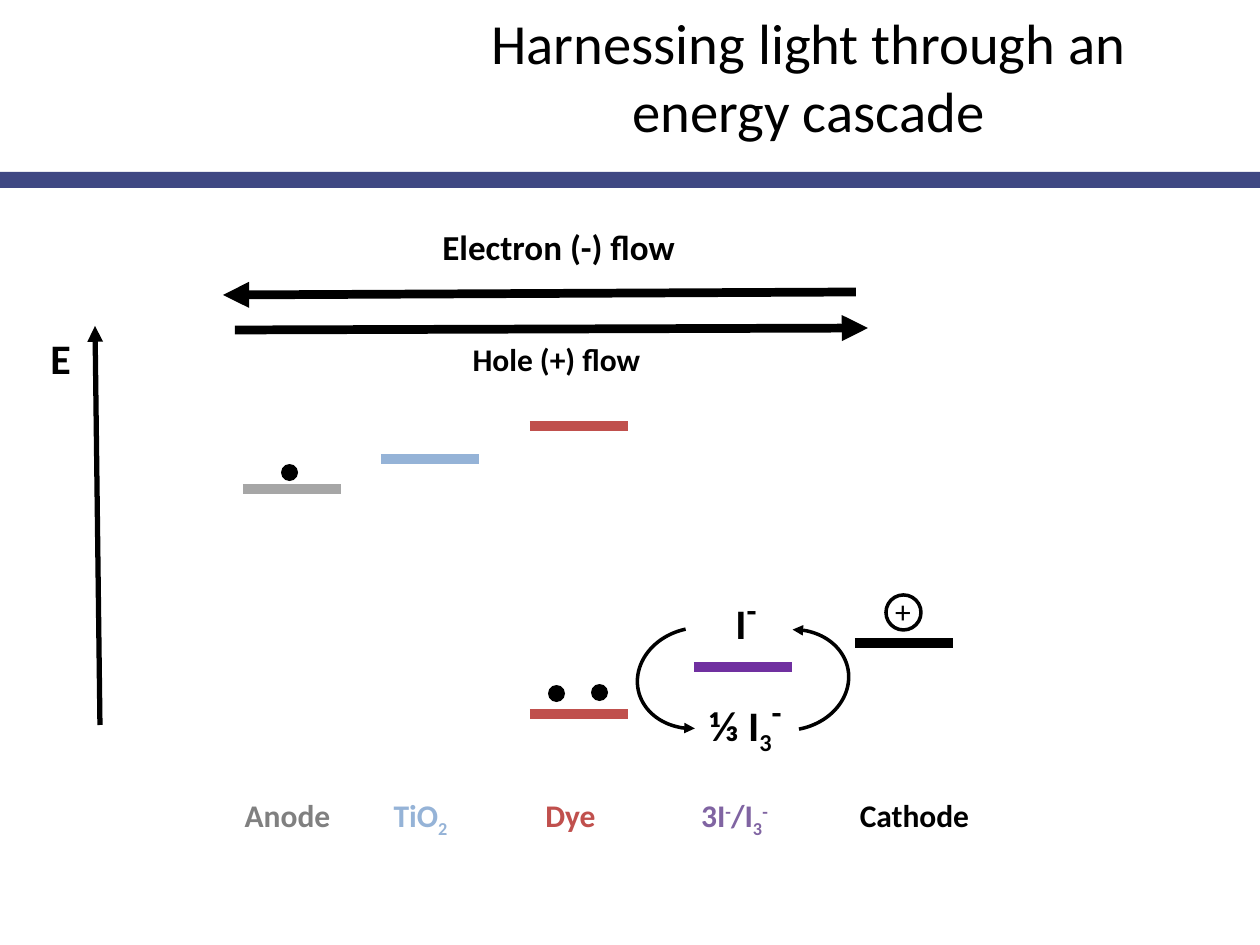
from lxml import etree
from pptx import Presentation
from pptx.dml.color import RGBColor
from pptx.enum.shapes import MSO_CONNECTOR, MSO_SHAPE
from pptx.enum.text import MSO_ANCHOR, MSO_AUTO_SIZE, PP_ALIGN
from pptx.oxml.ns import qn
from pptx.util import Emu, Pt

RECT, OVAL, ARC = MSO_SHAPE.RECTANGLE, MSO_SHAPE.OVAL, MSO_SHAPE.ARC
STRAIGHT = MSO_CONNECTOR.STRAIGHT
LEFT, CENTER = PP_ALIGN.LEFT, PP_ALIGN.CENTER
MIDDLE, NO_FIT = MSO_ANCHOR.MIDDLE, MSO_AUTO_SIZE.NONE

PX = 914400 / 126
FONT = "Calibri"
BLACK, RED, BLUE = "000000", "C0504D", "95B3D7"
GRAY, PURPLE = "A6A6A6", "7030A0"
SUB, SUP = -25, 30
LEVEL_WIDTH = 98

# left, y, colour of each energy level
LEVELS = [
    (530, 426, RED), (530, 714, RED), (381, 459, BLUE),
    (243, 489, GRAY), (694, 667, PURPLE), (855, 643, BLACK),
]
ELECTRONS = [(548, 685), (281, 464), (591, 684)]
# left, width, colour, runs of (text, baseline)
MATERIALS = [
    (231, 113, "808080", [("Anode", 0)]),
    (364, 113, BLUE, [("TiO", 0), ("2", SUB)]),
    (514, 113, RED, [("Dye", 0)]),
    (678, 113, "8064A2",
     [("3I", 0), ("-", SUP), ("/I", 0), ("3", SUB), ("-", SUP)]),
    (847, 135, BLACK, [("Cathode", 0)]),
]


def px(*values):
    return [Emu(round(v * PX)) for v in values]


def color(hex_text):
    return RGBColor.from_string(hex_text)


def set_font(font, size, hex_text=BLACK, bold=False):
    fmt = {"name": FONT, "size": Pt(size), "bold": bold}
    for name, value in fmt.items():
        setattr(font, name, value)
    font.color.rgb = color(hex_text)


def set_line(sp, hex_text, width, arrow=None):
    """Style an outline; arrow is 'headEnd' (start) or 'tailEnd' (finish)."""
    sp.line.color.rgb = color(hex_text)
    sp.line.width = Pt(width)
    if arrow:
        etree.SubElement(sp.line._get_or_add_ln(), qn(f"a:{arrow}"), type="triangle")


def add_line(shapes, start, end, hex_text, width, arrow=None):
    line = shapes.add_connector(STRAIGHT, *px(*start, *end))
    set_line(line, hex_text, width, arrow)
    etree.SubElement(line._element.spPr, qn("a:effectLst"))


def add_filled(shapes, kind, box, hex_text):
    sp = shapes.add_shape(kind, *px(*box))
    sp.shadow.inherit = False
    sp.fill.solid()
    sp.fill.fore_color.rgb = color(hex_text)
    sp.line.fill.background()


def add_outline(shapes, kind, box, arrow=None):
    sp = shapes.add_shape(kind, *px(*box))
    sp.shadow.inherit = False
    sp.fill.background()
    set_line(sp, BLACK, 2, arrow)
    return sp


def add_cycle_arc(shapes, box, rotation):
    sp = add_outline(shapes, ARC, box, "headEnd")
    sp.adjustments[0] = 116
    sp.rotation = rotation


def add_text(shapes, box, runs, size, hex_text=BLACK, align=LEFT, bold=True):
    """Add one paragraph; each run is (text, baseline percent[, own size])."""
    tf = shapes.add_textbox(*px(*box)).text_frame
    tf.word_wrap = True
    if align == CENTER:
        tf.margin_left = tf.margin_right = 0
    p = tf.paragraphs[0]
    p.alignment = align
    for text, baseline, *own_size in runs:
        r = p.add_run()
        r.text = text
        set_font(r.font, own_size[0] if own_size else size, hex_text, bold)
        if baseline:
            r.font._element.set("baseline", str(baseline * 1000))


def set_title(slide, text):
    title = slide.shapes.title
    title.left, title.top, title.width, title.height = px(420, 21, 777, 110)
    tf = title.text_frame
    fmt = {"auto_size": NO_FIT, "vertical_anchor": MIDDLE, "word_wrap": True}
    for name, value in fmt.items():
        setattr(tf, name, value)
    p = tf.paragraphs[0]
    p.alignment = CENTER
    r = p.add_run()
    r.text = text
    set_font(r.font, 32.4)


def add_hole(shapes):
    group = shapes.add_group_shape().shapes
    add_outline(group, OVAL, (886, 595, 35, 35))
    add_text(group, (876, 586, 54, 50), [("+", 0)], 18, align=CENTER, bold=False)


def add_redox_cycle(shapes):
    add_text(shapes, (723, 577, 57, 81), [("I", 0), ("-", SUP, 32)], 24)
    add_text(shapes, (697, 679, 137, 81),
             [("⅓ I", 0), ("3", SUB), ("-", SUP, 32)], 24)
    add_cycle_arc(shapes, (646, 619, 100, 118), 258)
    add_cycle_arc(shapes, (740, 621, 100, 118), 79.6)


def add_flows(shapes):
    add_line(shapes, (856, 292), (223, 295), BLACK, 5, "tailEnd")
    add_text(shapes, (430, 219, 267, 55), [("Electron (-) flow", 0)], 20)
    add_line(shapes, (868, 328), (235, 330), BLACK, 5, "headEnd")
    add_text(shapes, (404, 334, 305, 52), [("Hole (+) flow", 0)], 18, align=CENTER)


def main():
    prs = Presentation()
    prs.slide_width, prs.slide_height = px(1260, 945)
    slide = prs.slides.add_slide(prs.slide_layouts[5])
    shapes = slide.shapes

    add_filled(shapes, RECT, (0, 172, 1260, 16), "3F4883")
    set_title(slide, "Harnessing light through an energy cascade")
    add_line(shapes, (100, 725), (95, 326), BLACK, 3, "tailEnd")
    add_text(shapes, (38, 326, 49, 63), [("E", 0)], 24)
    for left, y, hex_text in LEVELS:
        add_line(shapes, (left, y), (left + LEVEL_WIDTH, y), hex_text, 6)
    for left, top in ELECTRONS:
        add_filled(shapes, OVAL, (left, top, 17, 17), BLACK)
    for left, width, hex_text, runs in MATERIALS:
        add_text(shapes, (left, 790, width, 50), runs, 18, hex_text, CENTER)
    add_hole(shapes)
    add_redox_cycle(shapes)
    add_flows(shapes)
    prs.save("out.pptx")


if __name__ == "__main__":
    main()
